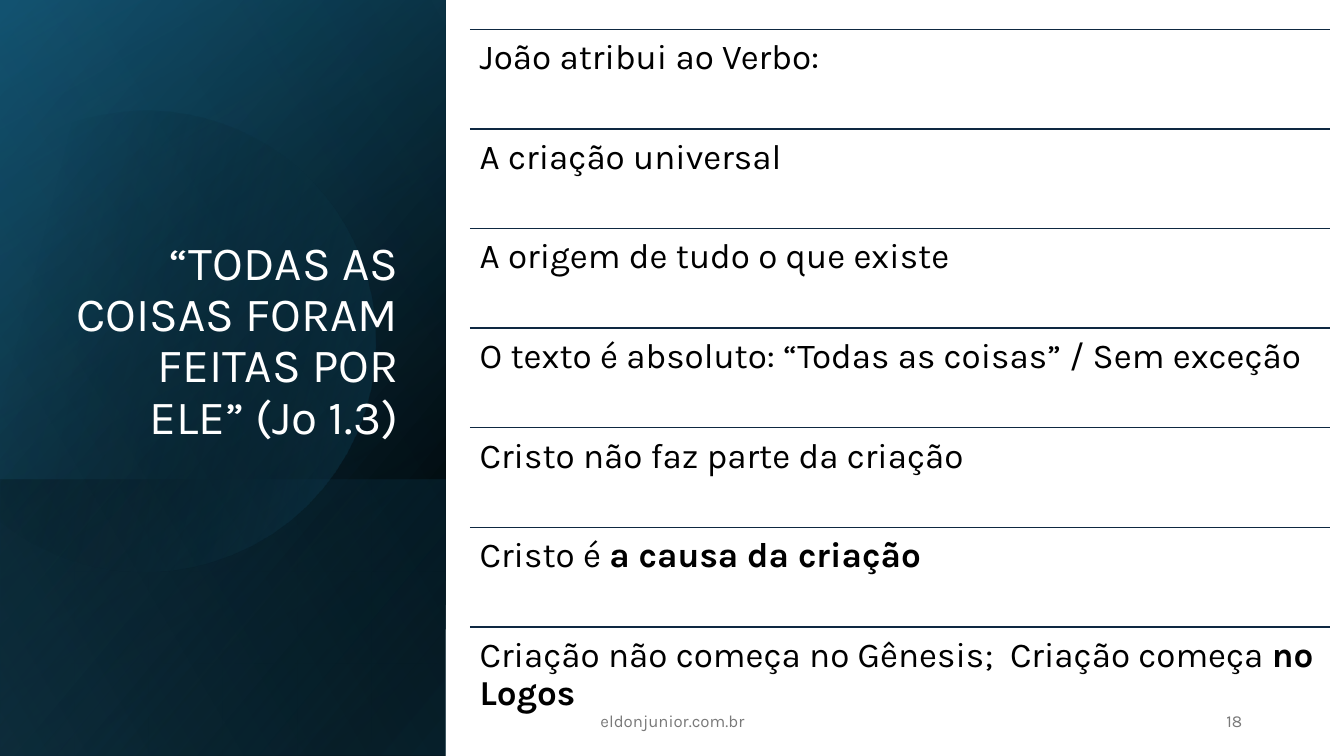
"""Build the slide about the Word as the cause of creation (Jo 1.3)."""
from math import cos, radians, sin

from lxml import etree
from pptx import Presentation
from pptx.dml.color import RGBColor
from pptx.enum.shapes import MSO_CONNECTOR, MSO_SHAPE
from pptx.enum.text import MSO_ANCHOR, PP_ALIGN
from pptx.oxml.ns import qn
from pptx.util import Inches, Pt

LEFT, CENTER, RIGHT = PP_ALIGN.LEFT, PP_ALIGN.CENTER, PP_ALIGN.RIGHT
TOP, MIDDLE, BOTTOM = MSO_ANCHOR.TOP, MSO_ANCHOR.MIDDLE, MSO_ANCHOR.BOTTOM
RECTANGLE, STRAIGHT = MSO_SHAPE.RECTANGLE, MSO_CONNECTOR.STRAIGHT

TITLE = "“TODAS AS COISAS FORAM FEITAS POR ELE” (Jo 1.3)"
STATEMENTS = [
    ("João atribui ao Verbo:", ""),
    ("A criação universal", ""),
    ("A origem de tudo o que existe", ""),
    ("O texto é absoluto: “Todas as coisas” / Sem exceção", ""),
    ("Cristo não faz parte da criação", ""),
    ("Cristo é ", "a causa da criação"),
    ("Criação não começa no Gênesis;  Criação começa ", "no Logos"),
]
FOOTERS = [
    ("18", (9.42, 6.95, 3, 0.4), RIGHT),
    ("eldonjunior.com.br", (4.42, 6.95, 4.5, 0.4), CENTER),
]
FULL_PANEL = (-1.54, 1.54, 7.5, 4.42)
LOWER_PANEL = (0.84, 3.92, 2.74, 4.42)
BLOB_BOX = (-0.55, 1.06, 4.27, 4.57)
BLOB_ROTATION = 343.9
BLOB_START = (1.49, 1.1)
BLOB_CURVES_RIGHT = [
    ((2.46, 1.12), (3.35, 1.77), (3.63, 2.75)),
    ((3.98, 3.97), (3.28, 5.23), (2.07, 5.58)),
    ((1.31, 5.8), (0.53, 5.61), (-0.03, 5.14)),
]
BLOB_EDGE = [(-0.15, 5.03), (-0.15, 1.75), (0, 1.61)]
BLOB_CURVES_TOP = [
    ((0.23, 1.42), (0.5, 1.28), (0.8, 1.19)),
    ((1.03, 1.13), (1.26, 1.1), (1.49, 1.1)),
]
BASE_GRADIENT = (50, [(8, "000000", 100), (100, "104862", 100)])
TEAL_GRADIENT = (30, [(0, "000000", 0), (99, "156082", 46)])
LOWER_GRADIENT = (130, [(2, "156082", 29), (100, "000000", 30)])
BLOB_GRADIENT = (30, [(29, "000000", 0), (100, "156082", 43)])
SKY_GRADIENT = (120, [(0, "000000", 0), (99, "46B1E1", 11)])
LIST_LEFT, LIST_TOP, LIST_WIDTH, LIST_HEIGHT = 4.66, 0.29, 8.53, 6.92


def color(hex_value):
    return RGBColor.from_string(hex_value)


def place(shape, box):
    for name, value in zip(("left", "top", "width", "height"), box):
        setattr(shape, name, Inches(value))


def paint(shape, gradient):
    angle, stops = gradient
    shape.shadow.inherit = False
    shape.line.fill.background()
    shape.fill.gradient()
    shape.fill.gradient_angle = (360 - angle) % 360
    for stop, (position, hex_value, _) in zip(shape.fill.gradient_stops, stops):
        stop.position = position / 100
        stop.color.rgb = color(hex_value)
    for element, (_, _, alpha) in zip(shape._element.iter(qn("a:srgbClr")), stops):
        if alpha < 100:
            etree.SubElement(element, qn("a:alpha")).set("val", str(alpha * 1000))


def add_panel(slide, box, gradient, flipped=True):
    panel = slide.shapes.add_shape(RECTANGLE, *map(Inches, box))
    panel.rotation = 90
    if flipped:
        panel._element.spPr.xfrm.set("flipH", "1")
    paint(panel, gradient)


def curve_points(start, curves, steps=16):
    points = []
    for first, second, end in curves:
        for step in range(1, steps + 1):
            t = step / steps
            weights = ((1 - t) ** 3, 3 * t * (1 - t) ** 2, 3 * t * t * (1 - t), t ** 3)
            corners = (start, first, second, end)
            points.append(tuple(
                sum(weight * corner[axis] for weight, corner in zip(weights, corners))
                for axis in (0, 1)))
        start = end
    return points


def add_blob(slide):
    left, top, width, height = BLOB_BOX
    center_x, center_y = left + width / 2, top + height / 2
    turn = radians(-BLOB_ROTATION)
    outline = [BLOB_START, *curve_points(BLOB_START, BLOB_CURVES_RIGHT), *BLOB_EDGE,
               *curve_points(BLOB_EDGE[-1], BLOB_CURVES_TOP)]
    level = []
    for x, y in outline:
        dx, dy = x - center_x, y - center_y
        level.append((Inches(center_x + dx * cos(turn) - dy * sin(turn)),
                      Inches(center_y + dx * sin(turn) + dy * cos(turn))))
    builder = slide.shapes.build_freeform(*level[0])
    builder.add_line_segments(level[1:], close=True)
    blob = builder.convert_to_shape()
    place(blob, BLOB_BOX)
    blob.rotation = BLOB_ROTATION
    paint(blob, BLOB_GRADIENT)


def write(shape, runs, size, hex_value, alignment=LEFT, anchor=TOP, spacing=0.9, inset=0.05):
    frame = shape.text_frame
    frame_format = {"word_wrap": True, "vertical_anchor": anchor,
                    "margin_left": Inches(0.1), "margin_right": Inches(0.1),
                    "margin_top": Inches(inset), "margin_bottom": Inches(inset)}
    for name, value in frame_format.items():
        setattr(frame, name, value)
    paragraph = frame.paragraphs[0]
    paragraph.alignment = alignment
    paragraph.line_spacing = spacing
    for text, bold in runs:
        run = paragraph.add_run()
        run.text = text
        for name, value in {"name": "Karla", "size": Pt(size), "bold": bold}.items():
            setattr(run.font, name, value)
        run.font.color.rgb = color(hex_value)


def add_statements(slide):
    row_height = LIST_HEIGHT / len(STATEMENTS)
    for index, (plain, strong) in enumerate(STATEMENTS):
        top = LIST_TOP + index * row_height
        rule = slide.shapes.add_connector(
            STRAIGHT, Inches(LIST_LEFT), Inches(top),
            Inches(LIST_LEFT + LIST_WIDTH), Inches(top))
        rule.line.color.rgb = color("0E2841")
        rule.line.width = Pt(1)
        etree.SubElement(rule._element.spPr, qn("a:effectLst"))
        box = slide.shapes.add_textbox(
            *map(Inches, (LIST_LEFT, top, LIST_WIDTH, row_height)))
        runs = [(text, bold) for text, bold in ((plain, False), (strong, True)) if text]
        write(box, runs, 25, "000000", inset=0.1)


def main():
    presentation = Presentation()
    presentation.slide_width = Inches(13.33)
    presentation.slide_height = Inches(7.5)
    slide = presentation.slides.add_slide(presentation.slide_layouts[5])

    add_panel(slide, FULL_PANEL, BASE_GRADIENT)
    add_panel(slide, FULL_PANEL, TEAL_GRADIENT)
    add_panel(slide, LOWER_PANEL, LOWER_GRADIENT, flipped=False)
    add_blob(slide)
    add_panel(slide, FULL_PANEL, SKY_GRADIENT)

    title = slide.shapes.title
    place(title, (0.64, 1.84, 3.41, 2.62))
    write(title, [(TITLE, False)], 34, "FFFFFF", RIGHT, BOTTOM)
    slide.shapes._spTree.append(title._element)

    add_statements(slide)
    for text, box, alignment in FOOTERS:
        footer = slide.shapes.add_textbox(*map(Inches, box))
        write(footer, [(text, False)], 12, "797979", alignment, MIDDLE, spacing=1.0)
    presentation.save("out.pptx")


if __name__ == "__main__":
    main()
